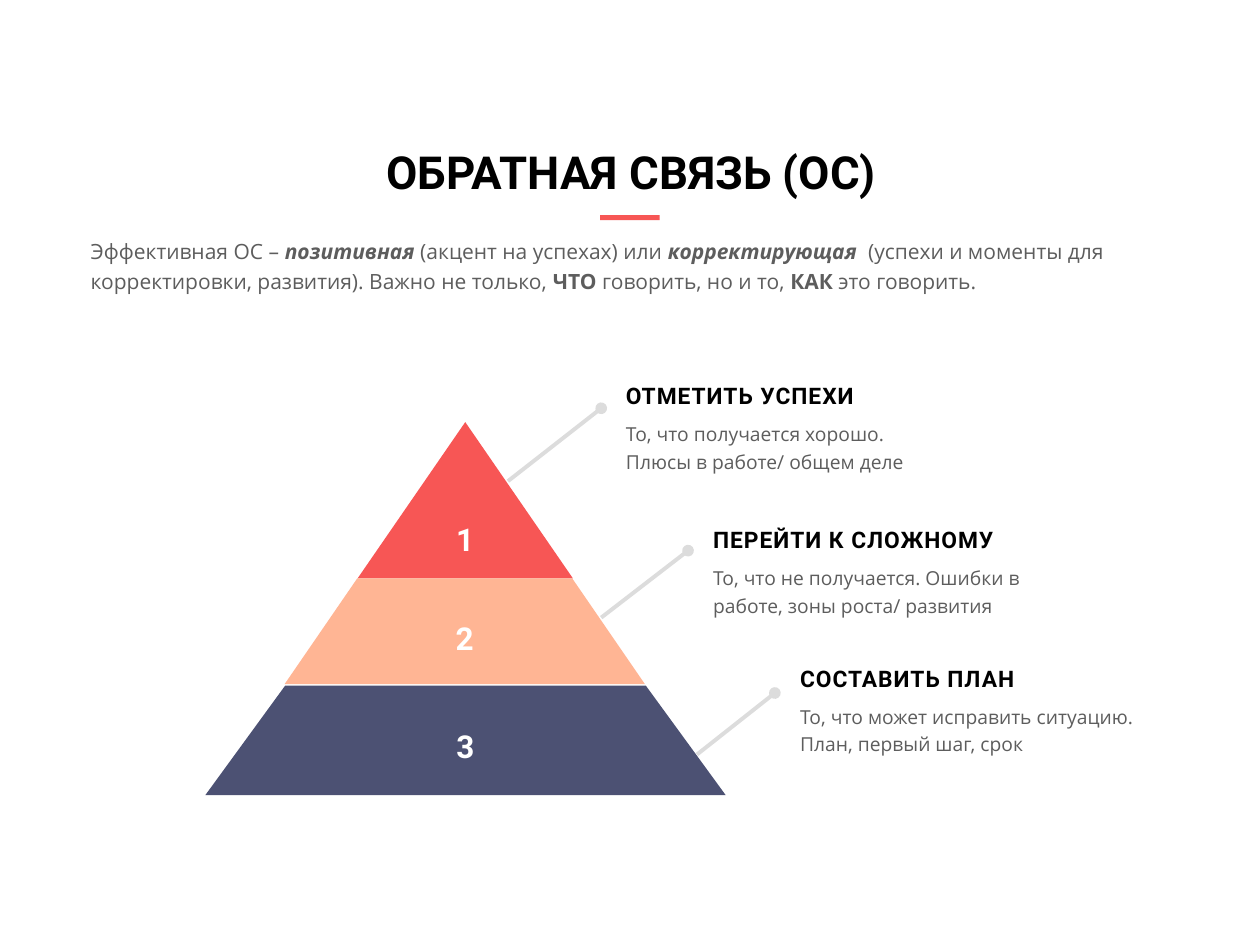
from lxml.etree import SubElement
from pptx import Presentation
from pptx.dml.color import RGBColor
from pptx.enum.shapes import MSO_CONNECTOR as Link, MSO_SHAPE as Preset
from pptx.enum.text import MSO_ANCHOR as Anchor, MSO_AUTO_SIZE as Fit, PP_ALIGN as Align
from pptx.oxml.ns import qn
from pptx.util import Cm, Pt

CORAL, PEACH, NAVY = "F75655", "FFB594", "4C5173"
BLACK, WHITE, GREY, PALE = "000000", "FFFFFF", "5D5D5D", "DCDCDC"
HEAD_FONT, TEXT_FONT = "Roboto", "Open Sans"

TIERS = [
    ("1", Preset.ISOSCELES_TRIANGLE, None, CORAL, (7.21, 8.51, 4.34, 3.15)),
    ("2", Preset.TRAPEZOID, 0.687, PEACH, (5.74, 11.66, 7.26, 2.13)),
    ("3", Preset.TRAPEZOID, 0.729, NAVY, (4.14, 13.82, 10.49, 2.21)),
]
STEPS = [
    ("ОТМЕТИТЬ УСПЕХИ", "То, что получается хорошо. Плюсы в работе/ общем деле",
     8.38, 6.4, (10.24, 9.7, 12.12, 8.23)),
    ("ПЕРЕЙТИ К СЛОЖНОМУ", "То, что не получается. Ошибки в работе, зоны роста/ развития",
     11.28, 7.11, (12.12, 12.45, 13.87, 11.1)),
    ("СОСТАВИТЬ ПЛАН", "То, что может исправить ситуацию. План, первый шаг, срок",
     14.07, 7.34, (14.05, 15.21, 15.62, 13.97)),
]
INTRO = [
    ("Эффективная ОС – ", False, False),
    ("позитивная", True, True),
    (" (акцент на успехах) или ", False, False),
    ("корректирующая  ", True, True),
    ("(успехи и моменты для корректировки, развития). Важно не только, ", False, False),
    ("ЧТО", True, False),
    (" говорить, но и то, ", False, False),
    ("КАК", True, False),
    (" это говорить.", False, False),
]


def color(value):
    """Turn a hex string into a colour."""
    return RGBColor.from_string(value)


def lengths(values):
    """Turn centimetre numbers into lengths."""
    return [Cm(value) for value in values]


def add_run(paragraph, text, size, font, ink, bold=False, italic=False, spacing=None):
    """Append one formatted run to a paragraph."""
    run = paragraph.add_run()
    run.text = text
    run.font.size, run.font.name = Pt(size), font
    run.font.bold, run.font.italic = bold, italic
    run.font.color.rgb = color(ink)
    if spacing:
        run._r.get_or_add_rPr().set("spc", str(spacing))


def add_block(slide, box, anchor=Anchor.TOP, line_spacing=None, top=0.13):
    """Add a wrapping text box and return its paragraph."""
    frame = slide.shapes.add_textbox(*lengths(box)).text_frame
    frame.word_wrap = True
    frame.vertical_anchor = anchor
    frame.margin_top = Cm(top)
    paragraph = frame.paragraphs[0]
    paragraph.space_before = Pt(10)
    paragraph.line_spacing = line_spacing
    return paragraph


def add_solid(shapes, preset, box, fill):
    """Add a flat shape without outline."""
    solid = shapes.add_shape(preset, *lengths(box))
    solid.shadow.inherit = False
    solid.fill.solid()
    solid.fill.fore_color.rgb = color(fill)
    solid.line.fill.background()
    return solid


def add_pointer(slide, ends):
    """Add a pale pointer that finishes in a dot."""
    pointer = slide.shapes.add_connector(Link.STRAIGHT, *lengths(ends))
    pointer.line.color.rgb = color(PALE)
    pointer.line.width = Pt(2.25)
    SubElement(pointer.line._get_or_add_ln(), qn("a:tailEnd"), type="oval")
    SubElement(pointer._element.spPr, qn("a:effectLst"))


def add_pyramid(slide):
    """Add the numbered tiers as one group."""
    pyramid = slide.shapes.add_group_shape()
    for number, preset, slope, fill, box in TIERS:
        tier = add_solid(pyramid.shapes, preset, box, fill)
        if slope:
            tier.adjustments[0] = slope
        tier.text_frame.vertical_anchor = Anchor.MIDDLE
        paragraph = tier.text_frame.paragraphs[0]
        paragraph.alignment = Align.CENTER
        add_run(paragraph, number, 18, HEAD_FONT, WHITE, bold=True)


def add_step(slide, index, heading, detail, heading_bottom, detail_width):
    """Add the heading and detail of one step."""
    left = 12.37 + 1.755 * index
    title = add_block(slide, (left, heading_bottom - 1.07, 6.4, 1.07), Anchor.BOTTOM)
    add_run(title, heading, 13, HEAD_FONT, BLACK, bold=True, spacing=60)
    body = add_block(slide, (left, heading_bottom + 0.05, detail_width, 1.5),
                     line_spacing=1.2, top=0)
    add_run(body, detail, 11, TEXT_FONT, GREY)


def set_title(slide, text):
    """Place and format the slide title."""
    title = slide.shapes.title
    title.left, title.top, title.width, title.height = lengths((2.08, 2.72, 21.29, 1.12))
    frame = title.text_frame
    frame.auto_size = Fit.NONE
    frame.word_wrap = False
    frame.vertical_anchor = Anchor.TOP
    frame.margin_top = Cm(0.19)
    paragraph = frame.paragraphs[0]
    paragraph.alignment = Align.CENTER
    add_run(paragraph, text, 26, HEAD_FONT, BLACK, bold=True)


def main():
    """Build the feedback slide."""
    deck = Presentation()
    deck.slide_width, deck.slide_height = Cm(25.4), Cm(19.05)
    slide = deck.slides.add_slide(deck.slide_layouts[5])
    set_title(slide, "ОБРАТНАЯ СВЯЗЬ (ОС)")
    add_solid(slide.shapes, Preset.RECTANGLE, (12.1, 4.34, 1.2, 0.1), CORAL)
    intro = add_block(slide, (1.58, 4.57, 22.43, 2.11), line_spacing=1.2)
    for text, bold, italic in INTRO:
        add_run(intro, text, 12, TEXT_FONT, GREY, bold, italic)
    for *_, ends in STEPS:
        add_pointer(slide, ends)
    add_pyramid(slide)
    for index, (*content, _) in enumerate(STEPS):
        add_step(slide, index, *content)
    deck.save("out.pptx")


if __name__ == "__main__":
    main()
